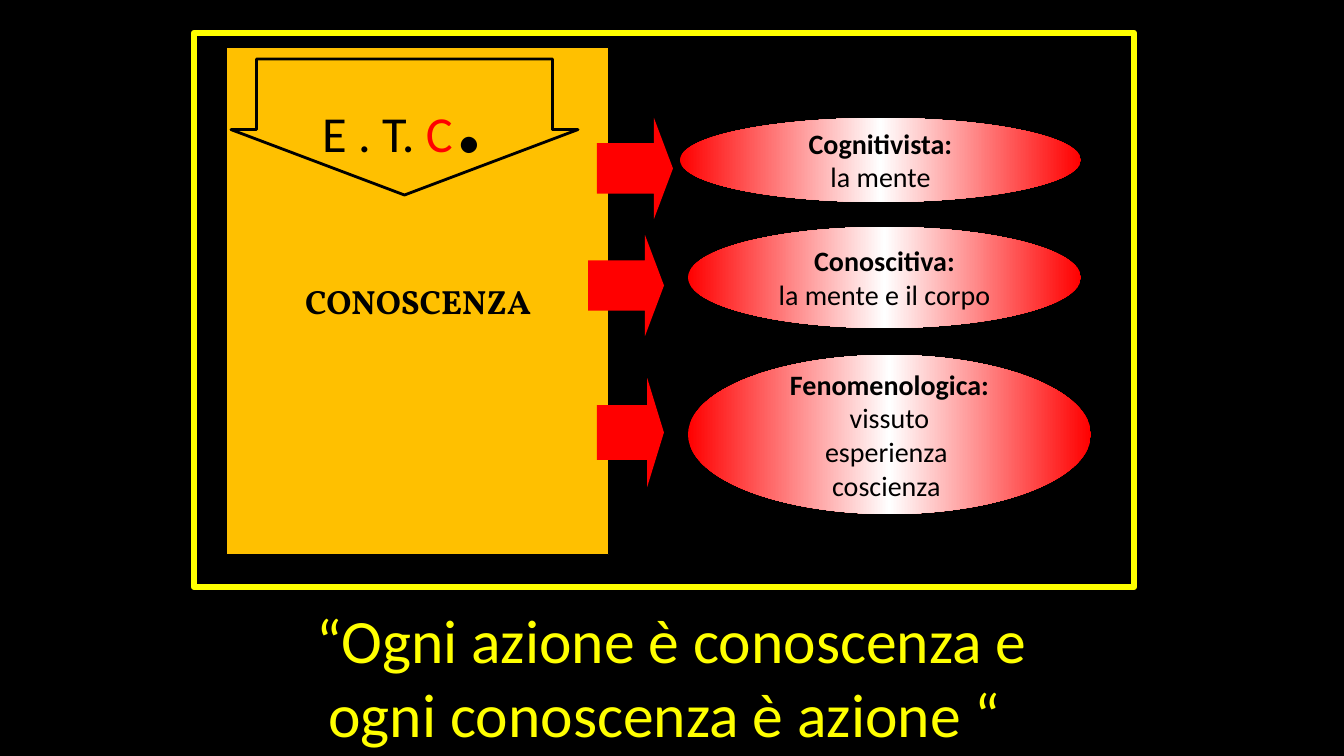
import copy

import pptx
import pptx.dml.color
import pptx.enum.shapes
import pptx.enum.text
import pptx.util

RGB = pptx.dml.color.RGBColor
KIND = pptx.enum.shapes.MSO_SHAPE
BLACK = RGB(0, 0, 0)
WHITE = RGB(255, 255, 255)
RED = RGB(255, 0, 0)
YELLOW = RGB(255, 255, 0)
GOLD = RGB(255, 192, 0)
PX = 914400 / 100.8

HEAD = {"size": 20, "name": "Calibri", "color": BLACK, "bold": True}
BODY = {**HEAD, "bold": False}
TITLE = {"size": 24, "name": "Vollkorn", "color": BLACK, "bold": True}
BIG = {"size": 36, "name": "Calibri", "color": BLACK}
QUOTE = {"size": 44, "name": "Calibri", "color": YELLOW}

FRAME = (194, 33, 940, 554)
PANEL = (227, 47, 382, 508)
DOWN = (231, 59, 347, 136)
FOOT = (168, 620, 1008, 112)
ETC = [[("E . T. ", BIG), ("C", {**BIG, "color": RED}), (".", {**BIG, "size": 96})]]
SAYING = ["“Ogni azione è conoscenza e", "ogni conoscenza è azione “ "]
VIEWS = [
    ((597, 118, 76, 101), (680, 118, 401, 84), "Cognitivista:", ["la mente"]),
    ((588, 235, 76, 101), (688, 227, 393, 101), "Conoscitiva:", ["la mente e il corpo"]),
    ((597, 378, 67, 109), (688, 355, 403, 159), "Fenomenologica:",
     ["vissuto", "esperienza ", "coscienza "]),
]


def scale(box):
    return [round(n * PX) for n in box]


def write(shape, lines, wrap=True):
    frame = shape.text_frame
    frame.word_wrap = wrap
    frame.vertical_anchor = pptx.enum.text.MSO_ANCHOR.MIDDLE
    for i, line in enumerate(lines):
        para = frame.add_paragraph() if i else frame.paragraphs[0]
        para.alignment = pptx.enum.text.PP_ALIGN.CENTER
        for text, style in line:
            run = para.add_run()
            run.text = text
            for key, value in style.items():
                if key == "color":
                    run.font.color.rgb = value
                else:
                    setattr(run.font, key, pptx.util.Pt(value) if key == "size" else value)


def draw(kind, box, fill=None, line=None, width=0, adjust=()):
    shape = slide.shapes.add_shape(kind, *scale(box))
    shape.shadow.inherit = False
    if fill is not None:
        shape.fill.solid()
        shape.fill.fore_color.rgb = fill
    if line is None:
        shape.line.fill.background()
    else:
        shape.line.color.rgb = line
        shape.line.width = pptx.util.Pt(width)
    for i, value in enumerate(adjust):
        shape.adjustments[i] = value
    return shape


def blend(shape):
    fill = shape.fill
    fill.gradient()
    fill.gradient_angle = 0
    stops = shape._element.spPr.find(".//" + pptx.oxml.ns.qn("a:gsLst"))
    stops.append(copy.deepcopy(stops[0]))
    for stop, place, color in zip(fill.gradient_stops, (0, 0.5, 1), (RED, WHITE, RED)):
        stop.position = place
        stop.color.rgb = color


deck = pptx.Presentation()
deck.slide_width, deck.slide_height = scale((1344, 756))
slide = deck.slides.add_slide(deck.slide_layouts[6])
slide.background.fill.solid()
slide.background.fill.fore_color.rgb = BLACK

draw(KIND.RECTANGLE, FRAME, BLACK, YELLOW, 4.5)
panel = draw(KIND.RECTANGLE, PANEL, GOLD, BLACK, 0.75)
write(panel, [[("CONOSCENZA", TITLE)]], False)

for arrow, oval, head, body in VIEWS:
    draw(KIND.RIGHT_ARROW, arrow, RED, adjust=(0.5, 0.25))
    view = draw(KIND.OVAL, oval)
    blend(view)
    write(view, [[(head, HEAD)]] + [[(text, BODY)] for text in body], False)

down = draw(KIND.DOWN_ARROW, DOWN, GOLD, BLACK, 2, (0.853, 0.481))
write(down, ETC)
foot = slide.shapes.add_textbox(*scale(FOOT))
write(foot, [[(text, QUOTE)] for text in SAYING])

deck.save("out.pptx")
